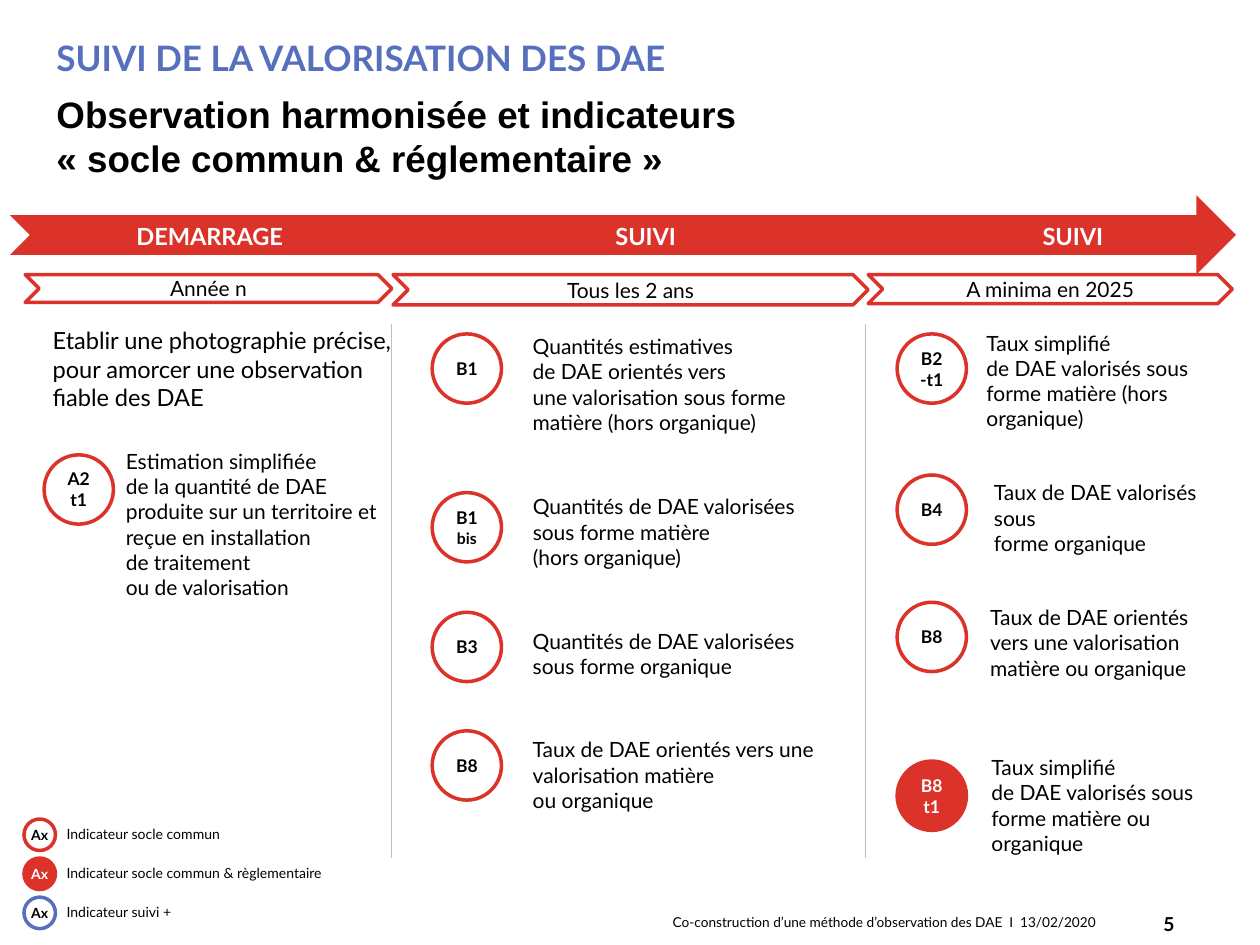
from lxml.etree import SubElement
from pptx import Presentation
from pptx.dml.color import RGBColor
from pptx.enum.shapes import MSO_CONNECTOR, MSO_SHAPE
from pptx.enum.text import MSO_ANCHOR, MSO_AUTO_SIZE, PP_ALIGN
from pptx.oxml.ns import qn
from pptx.util import Inches, Pt

RED, BLUE, BLACK, WHITE, GREY = "DB322A", "5770BE", "000000", "FFFFFF", "BFBFBF"
BADGE_SIZE = 0.55
LEGEND_SIZE = 0.25


def rgb(value):
    return RGBColor.from_string(value)


def style(paragraph, size, color=BLACK, bold=False, align=PP_ALIGN.LEFT, face="Lato"):
    paragraph.alignment = align
    font = paragraph.font
    font.name, font.size, font.bold = face, Pt(size), bold
    font.color.rgb = rgb(color)


def add_text(slide, box, text, size, anchor=MSO_ANCHOR.TOP, **look):
    label = slide.shapes.add_textbox(*map(Inches, box))
    frame = label.text_frame
    frame.word_wrap = True
    frame.vertical_anchor = anchor
    if anchor == MSO_ANCHOR.TOP:
        frame.auto_size = MSO_AUTO_SIZE.SHAPE_TO_FIT_TEXT
    paragraph = frame.paragraphs[0]
    paragraph.text = text
    style(paragraph, size, **look)
    return paragraph


def add_figure(slide, kind, box, fill=None, line=None):
    figure = slide.shapes.add_shape(kind, *map(Inches, box))
    figure.shadow.inherit = False
    if fill:
        figure.fill.solid()
        figure.fill.fore_color.rgb = rgb(fill)
    else:
        figure.fill.background()
    if line:
        figure.line.color.rgb = rgb(line)
        figure.line.width = Pt(2)
    else:
        figure.line.fill.background()
    return figure


def add_badge(slide, left, top, diameter, lines, size, fill=None, line=RED):
    badge = add_figure(slide, MSO_SHAPE.OVAL, (left, top, diameter, diameter), fill, line)
    frame = badge.text_frame
    frame.margin_left = frame.margin_right = frame.margin_top = frame.margin_bottom = 0
    frame.vertical_anchor = MSO_ANCHOR.MIDDLE
    paragraph = frame.paragraphs[0]
    for index, part in enumerate(lines):
        if index:
            paragraph.add_line_break()
        run = paragraph.add_run()
        run.text = part
        if part == "bis":
            run.font.size = Pt(9)
    style(paragraph, size, WHITE if fill else BLACK, True, PP_ALIGN.CENTER)


def add_header(slide, left, top, width):
    add_text(slide, (left, top, width, 0.92), "SUIVI DE LA VALORISATION DES DAE", 20,
             MSO_ANCHOR.MIDDLE, color=BLUE, bold=True)
    add_text(slide, (left, top + 0.76, width, 0.63),
             "Observation harmonisée et indicateurs \n«\u00a0socle commun & réglementaire\u00a0»",
             21, MSO_ANCHOR.MIDDLE, bold=True, face="Arial")


def add_timeline(slide, left, top, width, phases):
    add_figure(slide, MSO_SHAPE.NOTCHED_RIGHT_ARROW, (left, top, width, 0.63), RED)
    for name, name_left, name_width, period, period_left, period_width, height in phases:
        add_text(slide, (name_left, top + 0.16, name_width, 0.33), name, 13.5,
                 color=WHITE, bold=True, align=PP_ALIGN.CENTER)
        chevron = add_figure(slide, MSO_SHAPE.CHEVRON,
                             (period_left, top + 0.63, period_width, height), WHITE, RED)
        chevron.text_frame.vertical_anchor = MSO_ANCHOR.MIDDLE
        paragraph = chevron.text_frame.paragraphs[0]
        paragraph.text = period
        style(paragraph, 12, align=PP_ALIGN.CENTER)


def add_indicators(slide, left, top, indicators):
    for lines, badge_y, fill, text, text_x, text_y, width, height in indicators:
        add_badge(slide, left, top + badge_y, BADGE_SIZE, lines, 10, fill)
        add_text(slide, (left + text_x, top + text_y, width, height), text, 12)


def add_divider(slide, x, top, height):
    divider = slide.shapes.add_connector(
        MSO_CONNECTOR.STRAIGHT, Inches(x), Inches(top), Inches(x), Inches(top + height))
    divider.line.color.rgb = rgb(GREY)
    divider.line.width = Pt(0.75)
    SubElement(divider.element.spPr, qn("a:effectLst"))


def add_legend(slide, left, top, entries):
    for row, (text, fill, line) in enumerate(entries):
        y = top + row * 0.31
        add_badge(slide, left, y, LEGEND_SIZE, ["Ax"], 8, fill, line)
        add_text(slide, (left + 0.24, y, 2.6, 0.24), text, 8)


def add_footer(slide, left, top):
    credit = add_text(slide, (left, top + 0.05, 4.32, 0.3),
                      "Co-construction d’une méthode d’observation des DAE  I  13/02/2020",
                      7.8, MSO_ANCHOR.MIDDLE)
    credit.line_spacing = 0.8
    add_text(slide, (left + 3.62, top, 0.56, 0.4), "5", 11, MSO_ANCHOR.MIDDLE,
             bold=True, align=PP_ALIGN.RIGHT)


def main():
    deck = Presentation()
    deck.slide_width, deck.slide_height = Inches(10), Inches(7.5)
    slide = deck.slides.add_slide(deck.slide_layouts[6])

    add_header(slide, 0.35, 0, 7.8)
    add_timeline(slide, 0.08, 1.55, 9.73, [
        ("DEMARRAGE", 0.2, 2.93, "Année n", 0.2, 2.91, 0.22),
        ("SUIVI", 3.66, 2.93, "Tous les 2 ans", 3.12, 3.77, 0.24),
        ("SUIVI", 7.35, 2.33, "A minima en 2025", 6.89, 2.89, 0.23),
    ])
    add_text(slide, (0.32, 2.54, 2.91, 0.78),
             "Etablir une photographie précise, pour amorcer une observation fiable des DAE", 13.5)
    add_indicators(slide, 0.35, 3.61, [
        (["A2", "t1"], 0, None,
         "Estimation simplifiée \nde la quantité de DAE produite sur un territoire et reçue "
         "en installation \nde traitement \nou de valorisation", 0.55, -0.1, 2.36, 1.31),
    ])
    add_indicators(slide, 3.43, 2.65, [
        (["B1"], 0, None,
         "Quantités estimatives \nde DAE orientés vers \nune valorisation sous forme "
         "matière (hors organique)", 0.7, -0.05, 2.5, 0.91),
        (["B1", "bis"], 1.26, WHITE and None,
         "Quantités de DAE valorisées sous forme matière \n(hors organique)",
         0.7, 1.22, 2.65, 0.71),
        (["B3"], 2.21, None, "Quantités de DAE valorisées sous forme organique",
         0.7, 2.29, 2.5, 0.5),
        (["B8"], 3.15, None,
         "Taux de DAE orientés vers une valorisation matière \nou organique",
         0.7, 3.15, 2.44, 0.71),
    ])
    add_indicators(slide, 7.12, 2.65, [
        (["B2", "-t1"], 0, None,
         "Taux simplifié \nde DAE valorisés sous forme matière (hors organique)",
         0.61, -0.08, 1.92, 0.91),
        (["B4"], 1.12, None, "Taux de DAE valorisés sous \nforme organique",
         0.67, 1.11, 1.92, 0.71),
        (["B8"], 2.13, None, "Taux de DAE orientés vers une valorisation matière ou organique",
         0.64, 2.1, 1.92, 0.91),
        (["B8", "t1"], 3.39, RED,
         "Taux simplifié \nde DAE valorisés sous forme matière ou organique",
         0.65, 3.29, 1.92, 0.91),
    ])
    for x in (3.11, 6.87):
        add_divider(slide, x, 2.57, 4.24)
    add_legend(slide, 0.19, 6.5, [
        ("Indicateur socle commun", None, RED),
        ("Indicateur socle commun & règlementaire", RED, RED),
        ("Indicateur suivi +", None, BLUE),
    ])
    add_footer(slide, 5.24, 7.13)
    deck.save("out.pptx")


if __name__ == "__main__":
    main()
